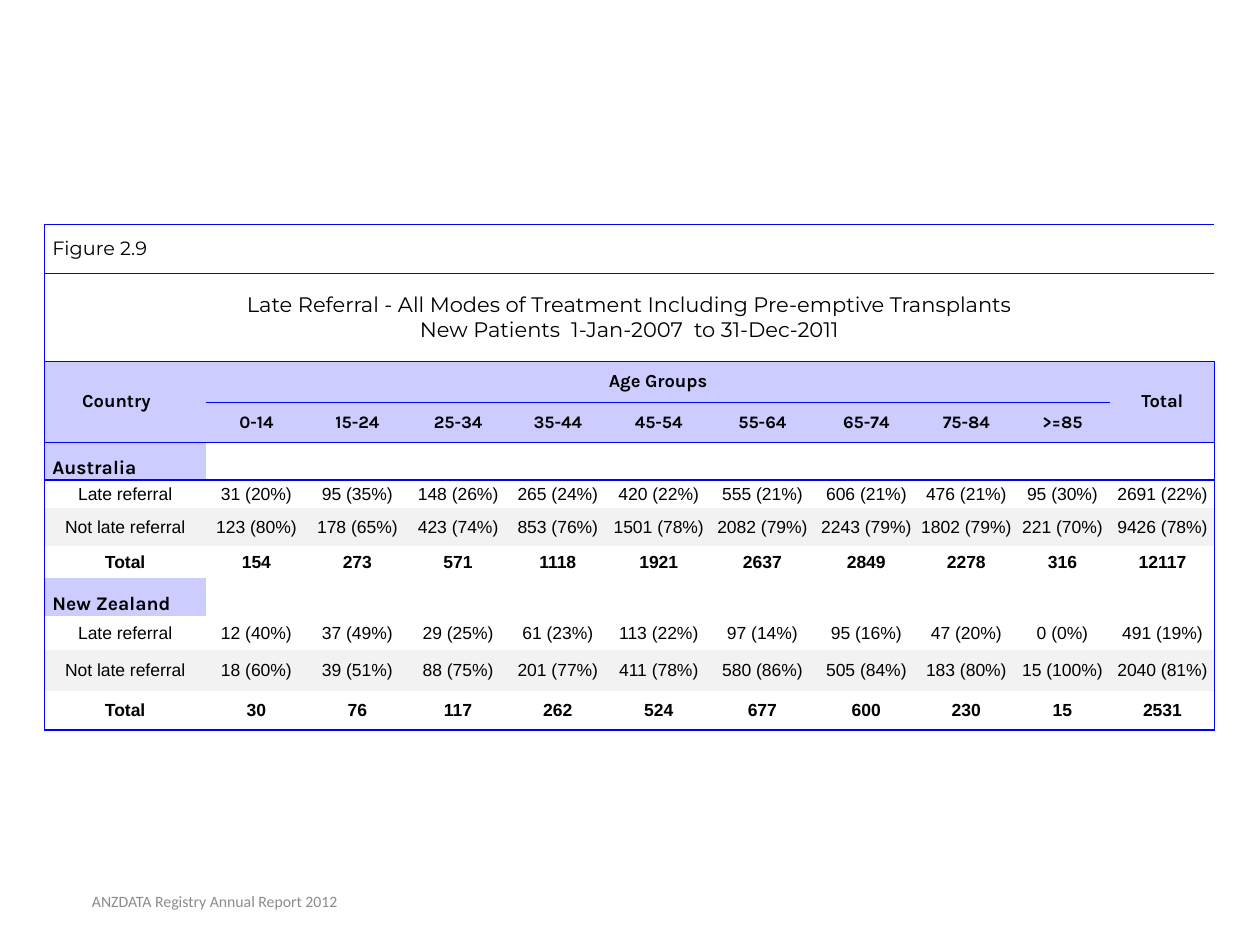
from dataclasses import dataclass, replace

from lxml.etree import SubElement
from pptx import Presentation
from pptx.dml.color import RGBColor
from pptx.enum.text import MSO_ANCHOR as Anchor, PP_ALIGN as Align
from pptx.oxml.ns import qn
from pptx.util import Pt

BLUE, LILAC, GREY = "0000FF", "CCCCFF", "F2F2F2"
NO_STYLE = "{2D5ABB26-0587-4C30-8999-92F81FD0307C}"
COL_WIDTHS = [92.2, 57.8, 57.6, 57.5, 56.5, 58.9, 59.6, 59.2, 55.1, 54.8, 59.5]
ROW_HEIGHTS = [28, 50.3, 23.4, 22.9, 21.7, 16, 21.7, 18.3, 21.7, 19.4, 23.4, 22.3]
LAST_ROW, LAST_COL = len(ROW_HEIGHTS) - 1, len(COL_WIDTHS) - 1
AGE_GROUPS = ["0-14", "15-24", "25-34", "35-44", "45-54", "55-64", "65-74", "75-84", ">=85"]


@dataclass(frozen=True)
class Style:
    font: str
    size: float
    bold: bool = False
    color: str = "000000"
    align: Align = Align.CENTER
    anchor: Anchor = Anchor.MIDDLE
    left: float = 1.4
    right: float = 1.4
    after: float = 0


@dataclass(frozen=True)
class Country:
    name: str
    first_row: int
    late: list[str]
    not_late: list[str]
    total: list[str]


CAPTION = Style("Montserrat", 11, align=Align.LEFT, left=4.5)
TITLE = Style("Montserrat", 12)
HEADER = Style("Karla", 10.5, bold=True)
AGE = replace(HEADER, size=10)
COUNTRY_HEADER = replace(HEADER, right=11.4)
COUNTRY = replace(HEADER, size=11, align=Align.LEFT, anchor=Anchor.BOTTOM, left=4.5)
BODY = Style("Arial", 10, after=14)
TOTAL = replace(BODY, bold=True)
FOOTER = Style("Calibri", 9, color="8C8C8C", left=7.2, right=7.2)

COUNTRIES = [
    Country(
        "Australia", 4,
        ["31 (20%)", "95 (35%)", "148 (26%)", "265 (24%)", "420 (22%)",
         "555 (21%)", "606 (21%)", "476 (21%)", "95 (30%)", "2691 (22%)"],
        ["123 (80%)", "178 (65%)", "423 (74%)", "853 (76%)", "1501 (78%)",
         "2082 (79%)", "2243 (79%)", "1802 (79%)", "221 (70%)", "9426 (78%)"],
        ["154", "273", "571", "1118", "1921", "2637", "2849", "2278", "316", "12117"],
    ),
    Country(
        "New Zealand", 8,
        ["12 (40%)", "37 (49%)", "29 (25%)", "61 (23%)", "113 (22%)",
         "97 (14%)", "95 (16%)", "47 (20%)", "0 (0%)", "491 (19%)"],
        ["18 (60%)", "39 (51%)", "88 (75%)", "201 (77%)", "411 (78%)",
         "580 (86%)", "505 (84%)", "183 (80%)", "15 (100%)", "2040 (81%)"],
        ["30", "76", "117", "262", "524", "677", "600", "230", "15", "2531"],
    ),
]


def rgb(color: str) -> RGBColor:
    return RGBColor.from_string(color)


def format_text(tf, text: str, style: Style) -> None:
    tf.text = text
    for p in tf.paragraphs:
        p.alignment = style.align
        if style.after:
            p.space_after = Pt(style.after)
        for r in p.runs:
            r.font.name = style.font
            r.font.size = Pt(style.size)
            r.font.bold = style.bold
            r.font.color.rgb = rgb(style.color)


def write(cell, text: str, style: Style) -> None:
    format_text(cell.text_frame, text, style)
    cell.vertical_anchor = style.anchor
    cell.margin_left, cell.margin_right = Pt(style.left), Pt(style.right)


def write_row(table, row: int, first_col: int, texts: list[str], style: Style) -> None:
    for col, text in enumerate(texts, first_col):
        write(table.cell(row, col), text, style)


def border_widths(row: int, col: int) -> dict[str, float]:
    under_ages = 0.75 if 0 < col < LAST_COL else 0
    return {
        "a:lnL": 1 if col == 0 else 0,
        "a:lnR": 1 if col == LAST_COL else 0,
        "a:lnT": under_ages if row == 3 else int(row in (0, 1, 2, 4)),
        "a:lnB": under_ages if row == 2 else int(row in (0, 1, 3, LAST_ROW)),
    }


def fill_color(row: int, col: int) -> str | None:
    if row in (2, 3) or (col == 0 and row in (4, 8)):
        return LILAC
    return GREY if row in (6, 10) else None


def format_cell(cell, row: int, col: int) -> None:
    cell.margin_top = cell.margin_bottom = Pt(0.7)
    tc_pr = cell._tc.get_or_add_tcPr()
    for tag, width in border_widths(row, col).items():
        if width:
            ln = SubElement(tc_pr, qn(tag), w=str(Pt(width)))
            SubElement(SubElement(ln, qn("a:solidFill")), qn("a:srgbClr"), val=BLUE)
    color = fill_color(row, col)
    if color:
        cell.fill.solid()
        cell.fill.fore_color.rgb = rgb(color)
    else:
        cell.fill.background()
    if not cell.text_frame.text:
        p = cell.text_frame.paragraphs[0]
        SubElement(p._p, qn("a:endParaRPr"), sz="800")


def add_referral_table(s) -> None:
    frame = s.shapes.add_table(
        len(ROW_HEIGHTS), len(COL_WIDTHS), Pt(25.4), Pt(128.2),
        Pt(sum(COL_WIDTHS)), Pt(sum(ROW_HEIGHTS)),
    )
    table = frame.table
    table.first_row = table.horz_banding = False
    table._tbl.tblPr.find(qn("a:tableStyleId")).text = NO_STYLE
    for column, width in zip(table.columns, COL_WIDTHS):
        column.width = Pt(width)
    for row, height in zip(table.rows, ROW_HEIGHTS):
        row.height = Pt(height)

    for top, left, bottom, right in [
        (0, 0, 0, LAST_COL), (1, 0, 1, LAST_COL), (2, 0, 3, 0),
        (2, 1, 2, LAST_COL - 1), (2, LAST_COL, 3, LAST_COL),
    ]:
        table.cell(top, left).merge(table.cell(bottom, right))

    write(table.cell(0, 0), "Figure 2.9", CAPTION)
    write(
        table.cell(1, 0),
        "Late Referral - All Modes of Treatment Including Pre-emptive Transplants\n"
        "New Patients  1-Jan-2007  to 31-Dec-2011",
        TITLE,
    )
    write(table.cell(2, 0), "Country", COUNTRY_HEADER)
    write(table.cell(2, 1), "Age Groups", HEADER)
    write(table.cell(2, LAST_COL), "Total", HEADER)
    write_row(table, 3, 1, AGE_GROUPS, AGE)
    for country in COUNTRIES:
        row = country.first_row
        write(table.cell(row, 0), country.name, COUNTRY)
        write_row(table, row + 1, 0, ["Late referral", *country.late], BODY)
        write_row(table, row + 2, 0, ["Not late referral", *country.not_late], BODY)
        write_row(table, row + 3, 0, ["Total", *country.total], TOTAL)

    for row in range(len(ROW_HEIGHTS)):
        for col in range(len(COL_WIDTHS)):
            format_cell(table.cell(row, col), row, col)


def add_footer(s) -> None:
    tf = s.shapes.add_textbox(Pt(8.6), Pt(500.4), Pt(228.2), Pt(28.8)).text_frame
    tf.word_wrap = True
    tf.vertical_anchor = FOOTER.anchor
    format_text(tf, "ANZDATA Registry Annual Report 2012", FOOTER)


def main() -> None:
    prs = Presentation()
    prs.slide_width, prs.slide_height = Pt(720), Pt(540)
    s = prs.slides.add_slide(prs.slide_layouts[6])
    add_referral_table(s)
    add_footer(s)
    prs.save("out.pptx")


if __name__ == "__main__":
    main()
